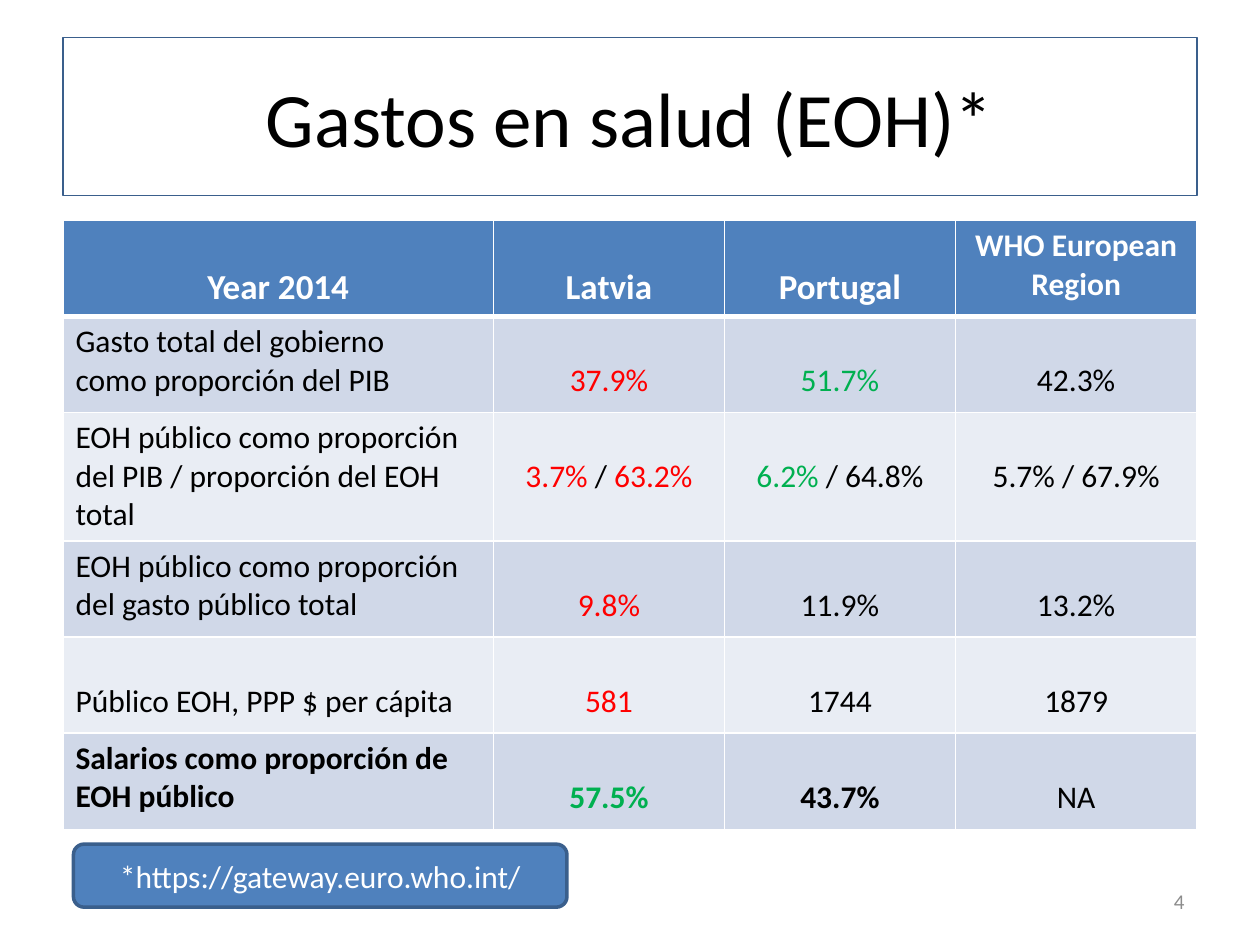
from lxml.etree import SubElement
from pptx import Presentation
from pptx.dml.color import RGBColor
from pptx.enum.shapes import MSO_SHAPE as Shape
from pptx.enum.text import MSO_ANCHOR as Anchor, PP_ALIGN as Align
from pptx.oxml.ns import qn
from pptx.util import Inches, Pt

BLUE, EDGE, WHITE, BLACK = "4F81BD", "3A5F8C", "FFFFFF", "000000"
RED, GREEN, GREY = "FF0000", "00B050", "8C8C8C"
BANDS = "D0D8E8", "E9EDF4"

HEADERS = ["Year 2014", "Latvia", "Portugal", "WHO European\nRegion"]
ROWS = [
    ["Gasto total del gobierno\ncomo proporción del PIB",
     [("37.9%", RED)], [("51.7%", GREEN)], [("42.3%", BLACK)]],
    ["EOH público como proporción del PIB / proporción del EOH total",
     [("3.7% ", RED), ("/ ", BLACK), ("63.2%", RED)],
     [("6.2%", GREEN), (" / 64.8%", BLACK)], [("5.7% / 67.9%", BLACK)]],
    ["EOH público como proporción del gasto público total",
     [("9.8%", RED)], [("11.9%", BLACK)], [("13.2%", BLACK)]],
    ["Público EOH, PPP $ per cápita",
     [("581", RED)], [("1744", BLACK)], [("1879", BLACK)]],
    ["Salarios como proporción de EOH público",
     [("57.5%", GREEN)], [("43.7%", BLACK)], [("NA", BLACK)]],
]


def rgb(value):
    """Turn a hex string into a colour."""
    return RGBColor.from_string(value)


class Deck:
    """Hold the style, the grid and the current slide."""

    font = "Calibri"
    cols, rows = 120, 90
    line_drop = 0.36

    def __init__(self):
        """Start a presentation with one title-only slide."""
        self.prs = Presentation()
        self.prs.slide_width, self.prs.slide_height = Inches(10), Inches(7.5)
        self.s = self.prs.slides.add_slide(self.prs.slide_layouts[5])

    def x(self, n):
        """Return the width of n grid columns."""
        return round(self.prs.slide_width * n / self.cols)

    def y(self, n):
        """Return the height of n grid rows."""
        return round(self.prs.slide_height * n / self.rows)

    def box(self, left, top, width, height):
        """Return a frame given in grid units."""
        return self.x(left), self.y(top), self.x(width), self.y(height)

    def put_text(self, tf, text, size, color=BLACK, align=Align.CENTER, bold=False):
        """Fill a text frame from a string or from coloured runs."""
        tf.word_wrap = True
        paragraphs = ([[(line, color)] for line in text.split("\n")]
                      if isinstance(text, str) else [text])
        for i, runs in enumerate(paragraphs):
            p = tf.add_paragraph() if i else tf.paragraphs[0]
            p.alignment = align
            p.font.name, p.font.size, p.font.bold = self.font, Pt(size), bold
            for words, tint in runs:
                r = p.add_run()
                r.text = words
                r.font.color.rgb = rgb(tint)

    def outline(self, sp, color, width):
        """Draw the outline of a shape."""
        sp.line.color.rgb, sp.line.width = rgb(color), Pt(width)

    def title(self, text, frame):
        """Place and fill the title placeholder."""
        sp = self.s.shapes.title
        sp.left, sp.top, sp.width, sp.height = self.box(*frame)
        self.outline(sp, EDGE, 0.75)
        sp.text_frame.vertical_anchor = Anchor.MIDDLE
        self.put_text(sp.text_frame, text, 44)

    def badge(self, text, frame):
        """Add a filled rounded rectangle with text."""
        sp = self.s.shapes.add_shape(Shape.ROUNDED_RECTANGLE, *self.box(*frame))
        sp.shadow.inherit = False
        sp.fill.solid()
        sp.fill.fore_color.rgb = rgb(BLUE)
        self.outline(sp, EDGE, 2)
        sp.text_frame.vertical_anchor = Anchor.MIDDLE
        self.put_text(sp.text_frame, text, 18, WHITE)

    def label(self, text, frame):
        """Add a small right-aligned text box."""
        tf = self.s.shapes.add_textbox(*self.box(*frame)).text_frame
        tf.vertical_anchor = Anchor.MIDDLE
        self.put_text(tf, text, 12, GREY, Align.RIGHT)

    def cell(self, cell, text, fill, size=18, drop=False, widths=(1, 1), **style):
        """Style one cell; drop moves its text down by a line."""
        for side, width in zip("LRTB", (1, 1, *widths)):
            ln = SubElement(cell._tc.get_or_add_tcPr(), qn(f"a:ln{side}"),
                            w=str(int(Pt(width))))
            SubElement(SubElement(ln, qn("a:solidFill")),
                       qn("a:srgbClr"), val=WHITE)
        cell.fill.solid()
        cell.fill.fore_color.rgb = rgb(fill)
        if drop:
            cell.margin_top = Inches(self.line_drop)
        self.put_text(cell.text_frame, text, size, **style)

    def table(self, headers, rows, frame, widths, heights):
        """Add the table with a header row and banded body rows."""
        shape = self.s.shapes.add_table(len(rows) + 1, len(headers),
                                        *self.box(*frame))
        table = shape.table
        for column, width in zip(table.columns, widths):
            column.width = self.x(width)
        for row, height in zip(table.rows, heights):
            row.height = self.y(height)
        for j, text in enumerate(headers):
            single = "\n" not in text
            self.cell(table.cell(0, j), text, BLUE, 20 if single else 18, single,
                      (1, 3), color=WHITE, bold=True)
        for i, (name, *values) in enumerate(rows, 1):
            fill, last = BANDS[(i - 1) % 2], i == len(rows)
            edges = (3 if i == 1 else 1, 1)
            self.cell(table.cell(i, 0), name, fill, drop=len(name) < 30,
                      widths=edges, align=Align.LEFT, bold=last)
            for j, runs in enumerate(values, 1):
                self.cell(table.cell(i, j), runs, fill, drop=True, widths=edges,
                          bold=last and runs[0][0] != "NA")


def main():
    """Build and save the slide."""
    deck = Deck()
    deck.title("Gastos en salud (EOH)*", (6, 3.6, 108, 15))
    heights = [9.15, 9.15, 12.25, 9.15, 9.15, 9.15]
    deck.table(HEADERS, ROWS, (6, 21, 108, sum(heights)), [41, 22, 22, 23], heights)
    deck.label("4", (86, 83.4, 28, 4.8))
    deck.badge("*https://gateway.euro.who.int/", (7, 80.4, 47, 6))
    deck.prs.save("out.pptx")


if __name__ == "__main__":
    main()
